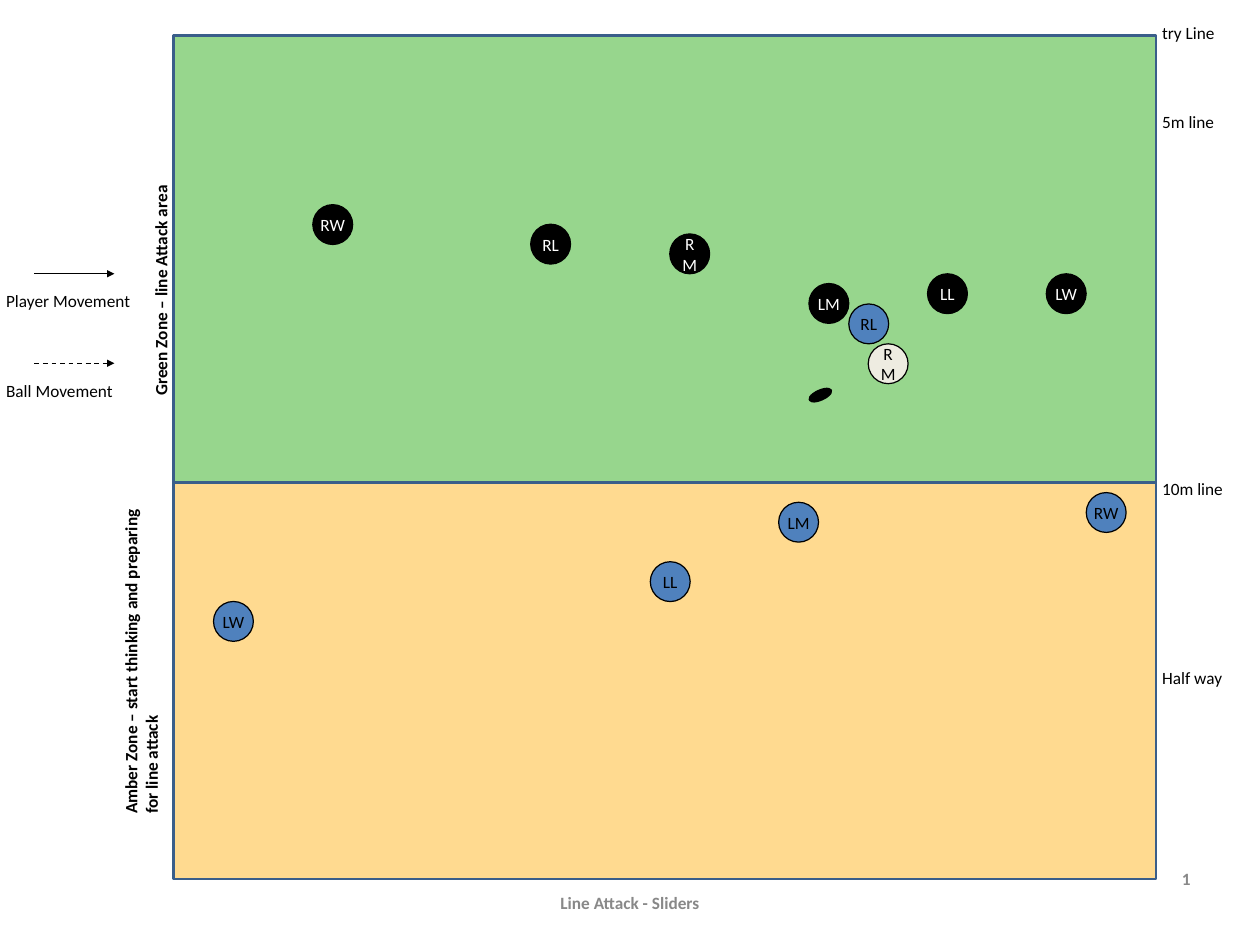
import pptx
import pptx.util
import pptx.dml.color
import pptx.enum.dml
import pptx.enum.shapes
import pptx.enum.text
import pptx.oxml
import pptx.oxml.ns

Pt = pptx.util.Pt
SHAPES = pptx.enum.shapes.MSO_SHAPE
ALIGN = pptx.enum.text.PP_ALIGN
ANCHOR = pptx.enum.text.MSO_ANCHOR

COLORS = {
    "green": "74C866", "amber": "FFCC66", "border": "3A5E8A",
    "blue": "4F81BD", "cream": "EEECE1",
    "black": "000000", "white": "FFFFFF", "gray": "888888",
}
TITLE = "Line Attack - Sliders"
SLIDE_NUMBER = "1"
PITCH_LEFT, PITCH_TOP, PITCH_WIDTH = 141, 29, 798.5
ZONES = [("green", 74, 363), ("amber", 72, 322.5)]
ZONE_LABELS = [
    ("Amber Zone – start thinking and preparing for line attack", (-19.4, 512, 266.4, 42.5)),
    ("Green Zone – line Attack area", (9.4, 193, 241.2, 26)),
]
PITCH_LINES = [("try Line", 13), ("5m line", 85.7), ("10m line", 383.8), ("Half way", 537)]
LEGEND = [("Player Movement", 222.5, False), ("Ball Movement", 295.2, True)]
PLAYER_SIZE = 32.4
PLAYERS = [
    ("LW", "blue", 189.7, 505), ("LM", "blue", 649, 424.4), ("RM", "cream", 721.8, 295.6),
    ("LL", "blue", 544.7, 472.7), ("RL", "blue", 706, 263.2), ("RW", "blue", 899, 416.5),
    ("LW", "black", 866.5, 238.7), ("LL", "black", 770, 238.7), ("LM", "black", 673.6, 246.6),
    ("RM", "black", 560.5, 206.3), ("RL", "black", 447.5, 198.4), ("RW", "black", 270.4, 182.5),
]
STACKED_LABEL = "RM"
BALL = (663.1, 311.8, 7.2, 18.7)


def rgb(name):
    return pptx.dml.color.RGBColor.from_string(COLORS[name])


def write(box, text, color="black", bold=False, align=ALIGN.LEFT,
          anchor=ANCHOR.TOP, wrap=False, inset=5):
    frame = box.text_frame
    frame.auto_size = pptx.enum.text.MSO_AUTO_SIZE.NONE
    frame.word_wrap = wrap
    frame.vertical_anchor = anchor
    frame.margin_left = frame.margin_right = Pt(inset)
    frame.margin_top = frame.margin_bottom = Pt(inset)
    para = frame.paragraphs[0]
    para.alignment = align
    span = para.add_run()
    span.text = text
    span.font.name = "Calibri"
    span.font.size = Pt(14)
    span.font.bold = bold
    span.font.color.rgb = rgb(color)


def add_box(page, bounds):
    return page.shapes.add_textbox(*map(Pt, bounds))


def add_filled(page, kind, bounds, fill, line="black", weight=1):
    shape = page.shapes.add_shape(kind, *map(Pt, bounds))
    shape.shadow.inherit = False
    shape.fill.solid()
    shape.fill.fore_color.rgb = rgb(fill)
    shape.line.color.rgb = rgb(line)
    shape.line.width = Pt(weight)
    return shape


def add_child(parent, tag, **attributes):
    child = pptx.oxml.parse_xml(f"<{tag} {pptx.oxml.ns.nsdecls('a')}/>")
    for name, value in attributes.items():
        child.set(name, value)
    parent.append(child)


def add_zones(page):
    top = PITCH_TOP
    for color, opacity, height in ZONES:
        zone = add_filled(page, SHAPES.RECTANGLE, (PITCH_LEFT, top, PITCH_WIDTH, height),
                          color, line="border", weight=2)
        fill = zone.fill.fore_color._xFill
        add_child(fill[0], "a:alpha", val=str(opacity * 1000))
        top += height


def add_players(page):
    for label, color, x, y in PLAYERS:
        bounds = (x - PLAYER_SIZE / 2, y - PLAYER_SIZE / 2, PLAYER_SIZE, PLAYER_SIZE)
        player = add_filled(page, SHAPES.OVAL, bounds, color)
        write(player, label, color="white" if color == "black" else "black",
              align=ALIGN.CENTER, anchor=ANCHOR.MIDDLE,
              wrap=label == STACKED_LABEL, inset=2)


def add_legend(page):
    for label, y, dashed in LEGEND:
        arrow = page.shapes.add_connector(pptx.enum.shapes.MSO_CONNECTOR.STRAIGHT,
                                          Pt(28), Pt(y), Pt(93), Pt(y))
        arrow.line.color.rgb = rgb("black")
        arrow.line.width = Pt(1)
        if dashed:
            arrow.line.dash_style = pptx.enum.dml.MSO_LINE.DASH
        add_child(arrow.line._get_or_add_ln(), "a:tailEnd", type="triangle")
        add_child(arrow._element.spPr, "a:effectLst")
        write(add_box(page, (0, y + 8.5, 119, 26)), label)


def main():
    deck = pptx.Presentation()
    deck.slide_width, deck.slide_height = Pt(1024), Pt(768)
    page = deck.slides.add_slide(deck.slide_layouts[5])

    title = page.shapes.title
    title.left, title.top, title.width, title.height = map(Pt, (350, 720.7, 324, 26))
    write(title, TITLE, color="gray", bold=True, align=ALIGN.CENTER,
          anchor=ANCHOR.MIDDLE, wrap=True)

    add_zones(page)
    add_players(page)
    add_legend(page)

    for label, top in PITCH_LINES:
        write(add_box(page, (PITCH_LEFT + PITCH_WIDTH, top, 66, 26)), label)
    for label, bounds in ZONE_LABELS:
        box = add_box(page, bounds)
        box.rotation = 270
        write(box, label, bold=True, wrap=True)

    write(add_box(page, (733.7, 701.3, 239, 26)), SLIDE_NUMBER, color="gray", bold=True,
          align=ALIGN.RIGHT, anchor=ANCHOR.MIDDLE, wrap=True)

    ball = add_filled(page, SHAPES.OVAL, BALL, "black", weight=2)
    ball.rotation = 66
    deck.save("out.pptx")


if __name__ == "__main__":
    main()
